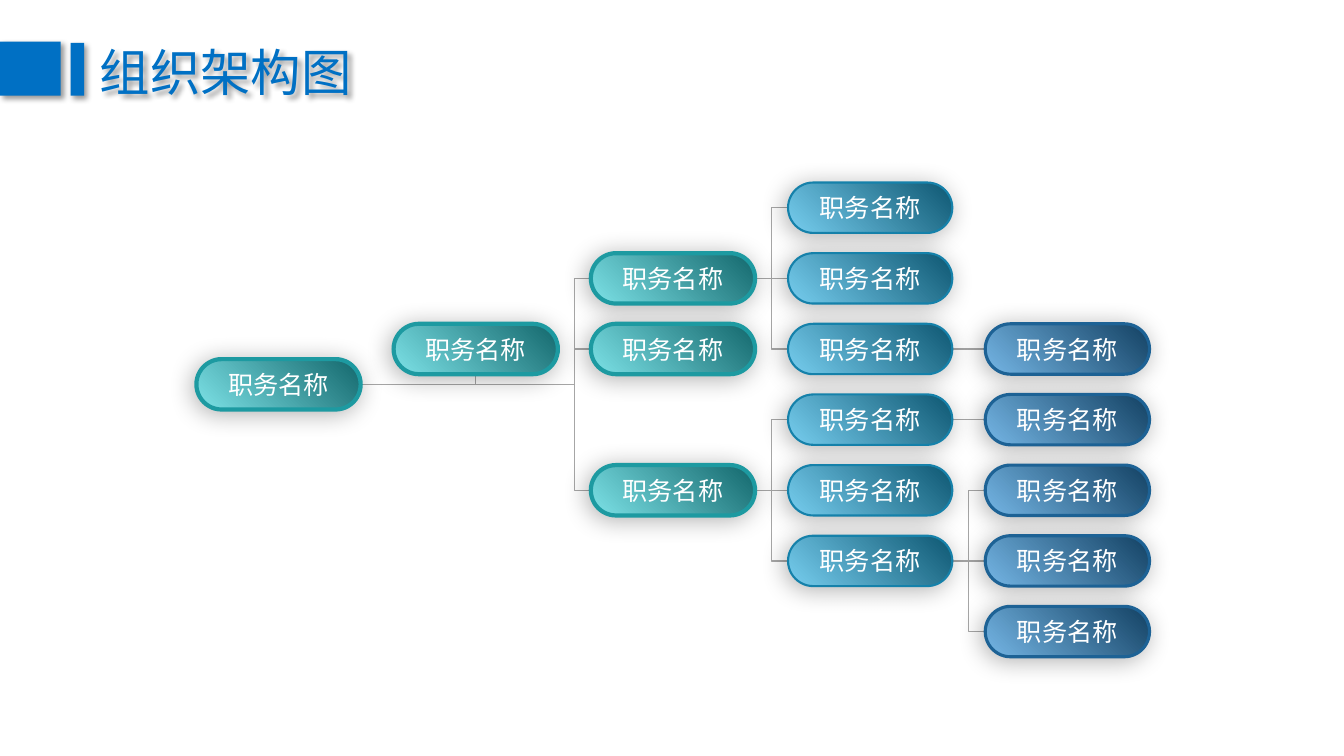
from dataclasses import dataclass

from lxml.etree import SubElement
from pptx import Presentation
from pptx.dml.color import RGBColor as RGB
from pptx.enum.shapes import MSO_CONNECTOR as CXN, MSO_SHAPE as SHAPE
from pptx.enum.text import MSO_ANCHOR as ANCHOR, PP_ALIGN as ALIGN
from pptx.oxml.ns import qn
from pptx.util import Cm, Pt


@dataclass(frozen=True)
class Level:
    dark: str
    light: str
    border: str
    weight: float


@dataclass(frozen=True)
class Shadow:
    alpha: int
    blur: int
    dist: int
    angle: int


@dataclass(frozen=True)
class Theme:
    font: str = "Noto Sans CJK SC"
    accent: str = "0070C4"
    label: str = "FFFFFF"
    link: str = "A6A6A6"
    title_size: int = 36
    label_size: int = 18
    link_weight: float = 1
    teal: Level = Level("13676C", "7DE2E7", "1D9AA1", 3)
    blue: Level = Level("0E5772", "77CEEF", "1581AA", 1.5)
    navy: Level = Level("134163", "75B6E5", "1D6295", 2.25)
    header_shadow: Shadow = Shadow(40, 4, 3, 45)
    node_shadow: Shadow = Shadow(30, 18, 3, 135)


LEFT, TOP = 4.95, 4.6
COLUMN_STEP, ROW_STEP = 4.97, 1.78
NODE_W, NODE_H = 4.14, 1.27
TOP_SITE, LEFT_SITE, BOTTOM_SITE, RIGHT_SITE = range(4)


class OrgSlide:
    def __init__(self, prs, theme):
        self.theme = theme
        self.slide = prs.slides.add_slide(prs.slide_layouts[5])
        self.shapes = self.slide.shapes

    def shadow(self, sp, style):
        sp.shadow.inherit = False
        effects = sp._element.spPr.find(qn("a:effectLst"))
        outer = SubElement(
            effects, qn("a:outerShdw"), blurRad=str(Pt(style.blur)),
            dist=str(Pt(style.dist)), dir=str(style.angle * 60000),
            algn="ctr", rotWithShape="0")
        color = SubElement(outer, qn("a:srgbClr"), val="000000")
        SubElement(color, qn("a:alpha"), val=str(style.alpha * 1000))

    def text(self, sp, text, size, color, align):
        tf = sp.text_frame
        tf.text = text
        tf.vertical_anchor = ANCHOR.MIDDLE
        tf.word_wrap = False
        p = tf.paragraphs[0]
        p.alignment = align
        r = p.runs[0]
        r.font.size = Pt(size)
        r.font.color.rgb = RGB.from_string(color)
        r.font.name = self.theme.font
        SubElement(r.font._element, qn("a:ea"), typeface=self.theme.font)

    def title(self, text, x, y, w, h):
        sp = self.shapes.title
        sp.left, sp.top, sp.width, sp.height = Cm(x), Cm(y), Cm(w), Cm(h)
        self.text(sp, text, self.theme.title_size, self.theme.accent, ALIGN.LEFT)
        self.shadow(sp, self.theme.header_shadow)

    def bar(self, x, y, w, h):
        sp = self.shapes.add_shape(SHAPE.RECTANGLE, Cm(x), Cm(y), Cm(w), Cm(h))
        sp.fill.solid()
        sp.fill.fore_color.rgb = RGB.from_string(self.theme.accent)
        sp.line.fill.background()
        self.shadow(sp, self.theme.header_shadow)

    def node(self, text, column, row, level):
        sp = self.shapes.add_shape(
            SHAPE.ROUNDED_RECTANGLE, Cm(LEFT + column * COLUMN_STEP),
            Cm(TOP + row * ROW_STEP), Cm(NODE_W), Cm(NODE_H))
        sp.adjustments[0] = 0.5
        sp.fill.gradient()
        sp.fill.gradient_angle = 225
        for stop, color in zip(sp.fill.gradient_stops, (level.dark, level.light)):
            stop.color.rgb = RGB.from_string(color)
        sp.line.color.rgb = RGB.from_string(level.border)
        sp.line.width = Pt(level.weight)
        self.shadow(sp, self.theme.node_shadow)
        self.text(sp, text, self.theme.label_size, self.theme.label, ALIGN.CENTER)
        return sp

    def connector(self, kind):
        cxn = self.shapes.add_connector(kind, 0, 0, 0, 0)
        cxn.line.color.rgb = RGB.from_string(self.theme.link)
        cxn.line.width = Pt(self.theme.link_weight)
        SubElement(cxn._element.spPr, qn("a:effectLst"))
        self.shapes._spTree.insert(2, cxn._element)
        return cxn

    def link(self, parent, child, bend=0.5):
        level = parent.top == child.top
        cxn = self.connector(CXN.STRAIGHT if level else CXN.ELBOW)
        cxn.begin_connect(parent, RIGHT_SITE)
        cxn.end_connect(child, LEFT_SITE)
        if not level:
            guides = cxn._element.spPr.find(".//" + qn("a:avLst"))
            SubElement(guides, qn("a:gd"), name="adj1",
                       fmla=f"val {round(bend * 100000)}")

    def stub(self, parent, assistant):
        cxn = self.connector(CXN.STRAIGHT)
        cxn.begin_x = assistant.left + assistant.width // 2
        cxn.begin_y = parent.top + parent.height // 2
        cxn.end_connect(assistant, BOTTOM_SITE)


def main():
    prs = Presentation()
    prs.slide_width, prs.slide_height = Cm(33.87), Cm(19.05)
    theme = Theme()
    s = OrgSlide(prs, theme)

    s.title("组织架构图", 2.26, 0.91, 6.93, 1.8)
    s.bar(0, 1.05, 1.53, 1.36)
    s.bar(1.78, 1.08, 0.34, 1.33)

    columns = [
        (theme.teal, [2.5]),
        (theme.teal, [2]),
        (theme.teal, [1, 2, 4]),
        (theme.blue, range(6)),
        (theme.navy, range(2, 7)),
    ]
    nodes = {
        (column, row): s.node("职务名称", column, row, level)
        for column, (level, rows) in enumerate(columns)
        for row in rows
    }

    root = nodes[0, 2.5]
    s.stub(root, nodes[1, 2])
    for row in (1, 2, 4):
        s.link(root, nodes[2, row], bend=0.93)

    reports = {
        (2, 1): (0, 1, 2),
        (2, 4): (3, 4, 5),
        (3, 2): (2,),
        (3, 3): (3,),
        (3, 5): (4, 5, 6),
    }
    for (column, row), child_rows in reports.items():
        for child_row in child_rows:
            s.link(nodes[column, row], nodes[column + 1, child_row])

    prs.save("out.pptx")


if __name__ == "__main__":
    main()
